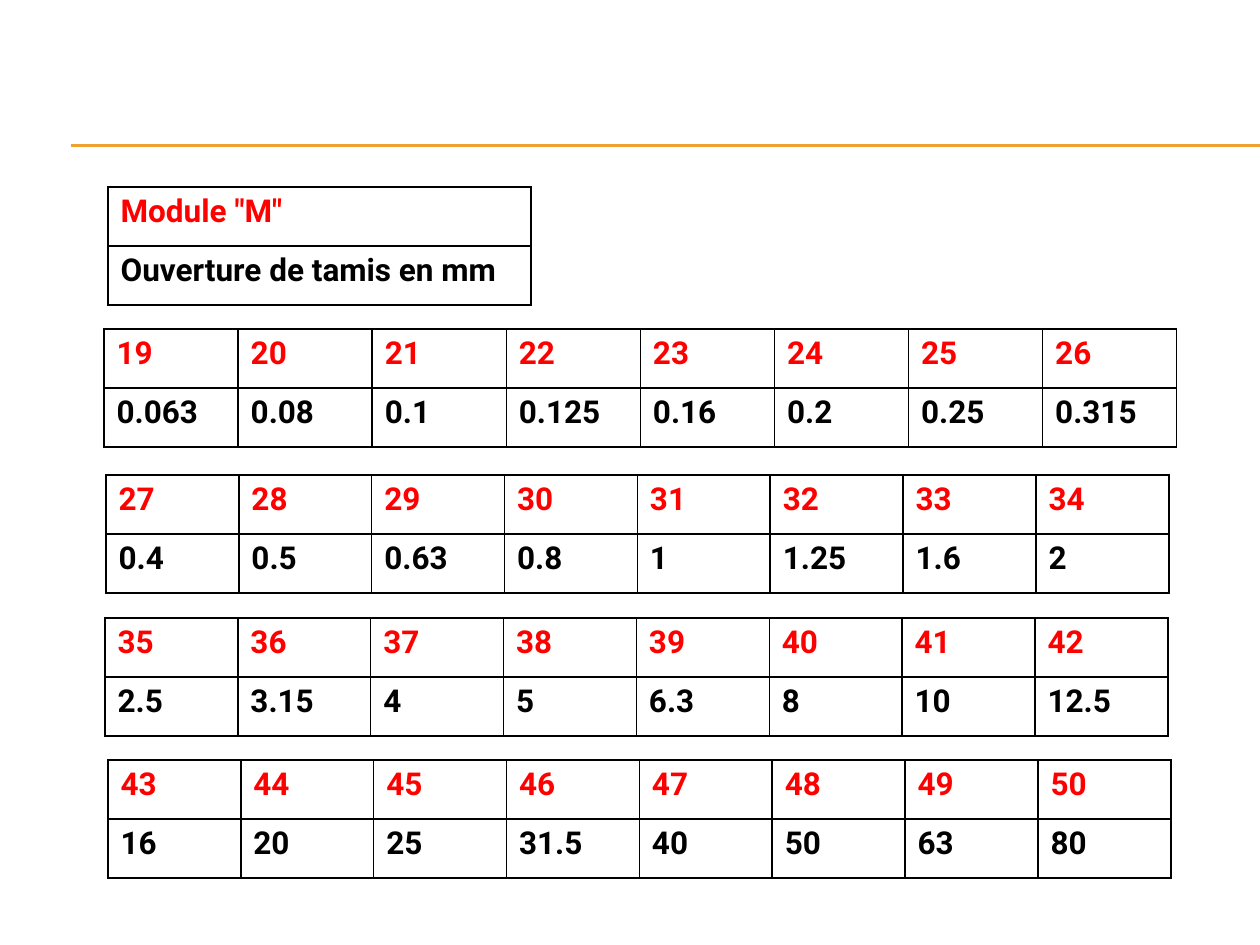
from itertools import count

from lxml.etree import SubElement
from pptx import Presentation
from pptx.dml.color import RGBColor
from pptx.enum.shapes import MSO_CONNECTOR
from pptx.oxml import parse_xml
from pptx.oxml.ns import nsdecls, qn
from pptx.util import Pt

SCALE = 914400 / 126
FIRST_MODULE = 19
RED, BLACK, GOLD = "FF0000", "000000", "F0A22E"
SIEVES = [
    ((104, 329, 1073, 118), "0.063 0.08 0.1 0.125 0.16 0.2 0.25 0.315"),
    ((106, 475, 1063, 118), "0.4 0.5 0.63 0.8 1 1.25 1.6 2"),
    ((105, 618, 1063, 118), "2.5 3.15 4 5 6.3 8 10 12.5"),
    ((108, 760, 1063, 118), "16 20 25 31.5 40 50 63 80"),
]


def px(length):
    return round(length * SCALE)


def paint(color_format, hex_color):
    color_format.rgb = RGBColor.from_string(hex_color)


def border_cell(cell):
    cell.fill.background()
    properties = cell._tc.get_or_add_tcPr()
    for position, side in enumerate("LRTB"):
        border = parse_xml(
            f'<a:ln{side} {nsdecls("a")} w="{Pt(1)}"><a:solidFill>'
            f'<a:srgbClr val="{BLACK}"/></a:solidFill></a:ln{side}>'
        )
        properties.insert(position, border)


def write_cell(cell, text, color):
    border_cell(cell)
    run = cell.text_frame.paragraphs[0].add_run()
    run.text = text
    for attribute, value in {"name": "Roboto", "size": Pt(18), "bold": True}.items():
        setattr(run.font, attribute, value)
    paint(run.font.color, color)


def add_sieve_table(slide, box, modules, openings):
    left, top, width, height = map(px, box)
    columns = len(modules)
    table = slide.shapes.add_table(2, columns, left, top, width, height).table
    for flag in ("first_row", "horz_banding"):
        setattr(table, flag, False)
    for column in table.columns:
        column.width = width // columns
    for row, (texts, color) in enumerate(((modules, RED), (openings, BLACK))):
        for column, text in enumerate(texts):
            write_cell(table.cell(row, column), text, color)


def add_title_rule(slide, box):
    left, top, width, gap = box
    for y in (top, top + gap):
        rule = slide.shapes.add_connector(
            MSO_CONNECTOR.STRAIGHT, px(left), px(y), px(left + width), px(y)
        )
        rule.line.width = Pt(0.75)
        paint(rule.line.color, GOLD)
        SubElement(rule._element.spPr, qn("a:effectLst"))


def main():
    presentation = Presentation()
    presentation.slide_width, presentation.slide_height = px(1260), px(945)
    slide = presentation.slides.add_slide(presentation.slide_layouts[6])

    add_title_rule(slide, (71, 145, 1189, 1))
    numbers = count(FIRST_MODULE)
    for box, sizes in SIEVES:
        openings = sizes.split()
        modules = [str(next(numbers)) for _ in openings]
        add_sieve_table(slide, box, modules, openings)
    add_sieve_table(
        slide, (108, 187, 423, 118), ['Module "M"'], ["Ouverture de tamis en mm"]
    )
    presentation.save("out.pptx")


if __name__ == "__main__":
    main()
